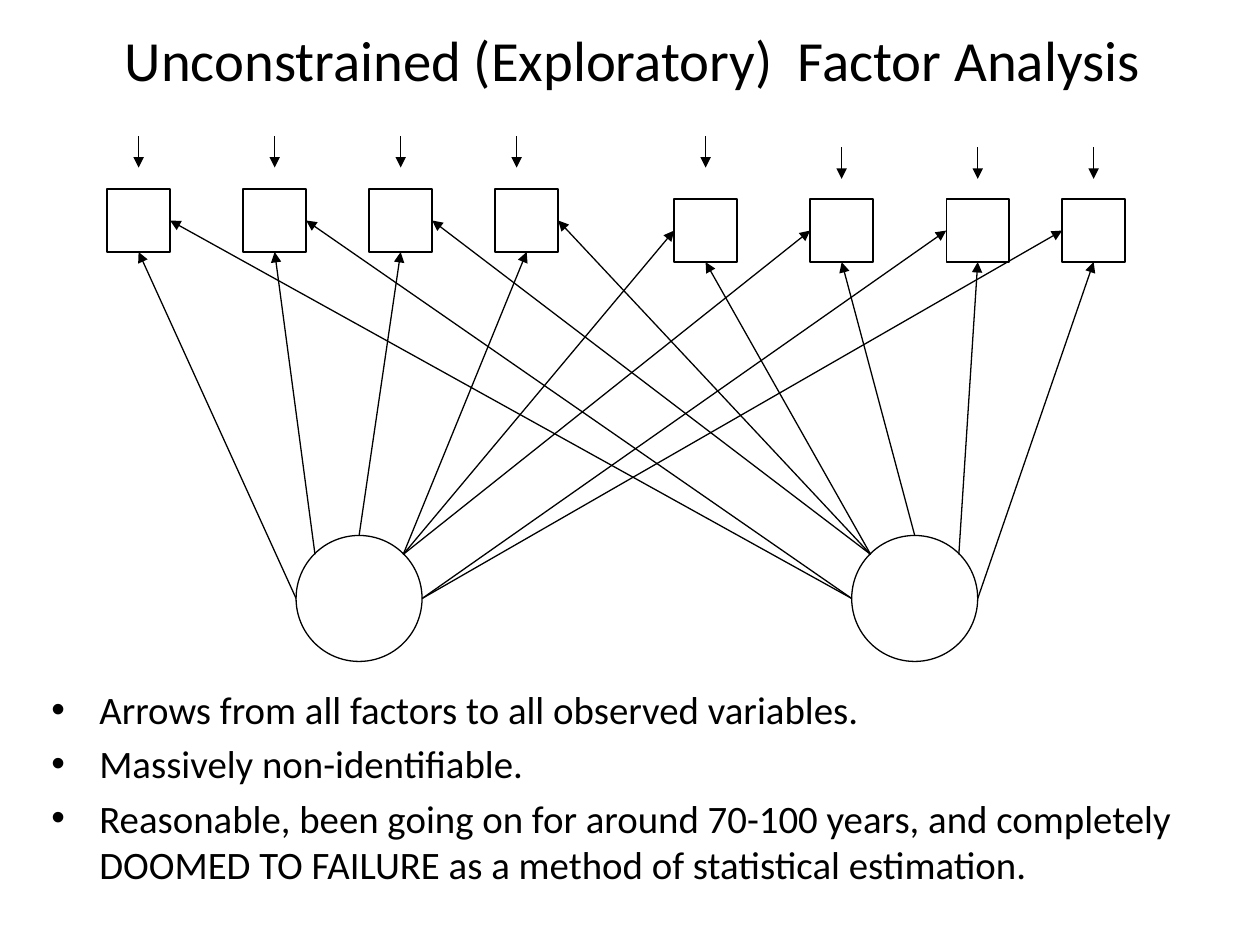
from pptx import Presentation
from pptx import util as u
from pptx.dml.color import RGBColor
from pptx.enum import shapes, text
from pptx.oxml.ns import qn
from lxml import etree

BLACK = RGBColor(0, 0, 0)
COLS, ROWS = 10, 7.5

prs = Presentation()
prs.slide_width, prs.slide_height = u.Inches(10), u.Inches(7.5)
CELL = prs.slide_width / COLS
s = prs.slides.add_slide(prs.slide_layouts[6])


def grid(*cells):
    """Turn grid columns and rows into slide lengths."""
    return [u.Emu(round(c * CELL)) for c in cells]


def arrow(start, end, box=None, side=0):
    """Draw an arrow, joined to a side of a box when one is given."""
    c = s.shapes.add_connector(shapes.MSO_CONNECTOR.STRAIGHT, *grid(*start, *end))
    if box is not None:
        c.end_connect(box, side)
    c.line.color.rgb, c.line.width = BLACK, u.Pt(0.75)
    etree.SubElement(c.line._get_or_add_ln(), qn("a:tailEnd"), type="triangle")
    etree.SubElement(c._element.spPr, qn("a:effectLst"))


# Title and bullet points
texts = [
    ((0.52, 0.08, 9, 0.78), ["Unconstrained (Exploratory)  Factor Analysis"], 32.4, False),
    ((0.31, 5.39, 9.52, 1.91), [
        "Arrows from all factors to all observed variables.",
        "Massively non-identifiable.",
        "Reasonable, been going on for around 70-100 years, and completely "
        "DOOMED TO FAILURE as a method of statistical estimation.",
    ], 22.2, True),
]
for place, lines, size, bulleted in texts:
    tf = s.shapes.add_textbox(*grid(*place)).text_frame
    tf.word_wrap = True
    tf.vertical_anchor = text.MSO_ANCHOR.TOP if bulleted else text.MSO_ANCHOR.MIDDLE
    for i, line in enumerate(lines):
        p = tf.paragraphs[0] if i == 0 else tf.add_paragraph()
        r = p.add_run()
        r.text = line
        for name, value in {"name": "Calibri", "size": u.Pt(size)}.items():
            setattr(r.font, name, value)
        r.font.color.rgb = BLACK
        if bulleted:
            p.space_before = u.Pt(0.2 * size)
            pPr = p._p.get_or_add_pPr()
            pPr.set("marL", str(u.Inches(0.38)))
            pPr.set("indent", str(-u.Inches(0.38)))
            etree.SubElement(pPr, qn("a:buFont"), typeface="Arial")
            etree.SubElement(pPr, qn("a:buChar"), char="•")
        else:
            p.alignment = text.PP_ALIGN.CENTER

# Observed variables (boxes) and factors (circles)
BOX, CIRCLE = 0.5, 1
box_lefts = [0.85, 1.93, 2.93, 3.93, 5.35, 6.43, 7.51, 8.43]
box_tops = [1.5] * 4 + [1.58] * 4
factor_lefts, factor_top = [2.35, 6.76], 4.25
RECT, OVAL = shapes.MSO_SHAPE.RECTANGLE, shapes.MSO_SHAPE.OVAL
nodes = [(RECT, x, y, BOX) for x, y in zip(box_lefts, box_tops)]
nodes += [(OVAL, x, factor_top, CIRCLE) for x in factor_lefts]
drawn = []
for kind, x, y, size in nodes:
    sp = s.shapes.add_shape(kind, *grid(x, y, size, size))
    sp.shadow.inherit = False
    sp.fill.background()
    sp.line.color.rgb, sp.line.width = BLACK, u.Pt(0.75)
    drawn.append(sp)
boxes = drawn[:len(box_lefts)]

# Loadings: every factor points to every variable
rim = {"left": (0, 0.5), "upper left": (0.15, 0.15), "top": (0.5, 0),
       "upper right": (0.85, 0.15), "right": (1, 0.5)}
starts = [
    ["left", "upper left", "top", "upper right"] + ["upper right"] * 2 + ["right"] * 2,
    ["left"] * 2 + ["upper left"] * 2 + ["upper left", "top", "upper right", "right"],
]
BOTTOM, LEFT, RIGHT = 2, 1, 3
for f, (x, points) in enumerate(zip(factor_lefts, starts)):
    for i, (box, point) in enumerate(zip(boxes, points)):
        own = i // 4 == f
        side = BOTTOM if own else (LEFT if f == 0 else RIGHT)
        dx, dy = rim[point]
        start = (x + dx * CIRCLE, factor_top + dy * CIRCLE)
        arrow(start, (box_lefts[i], box_tops[i]), box, side)

# Error terms: short arrows above the variables
error_xs = [1.1, 2.18, 3.18, 4.1, 5.6, 6.68, 7.76, 8.68]
error_tops = [1.08] * 5 + [1.17] * 3
for x, y in zip(error_xs, error_tops):
    arrow((x, y), (x, y + 0.25))

prs.save("out.pptx")
